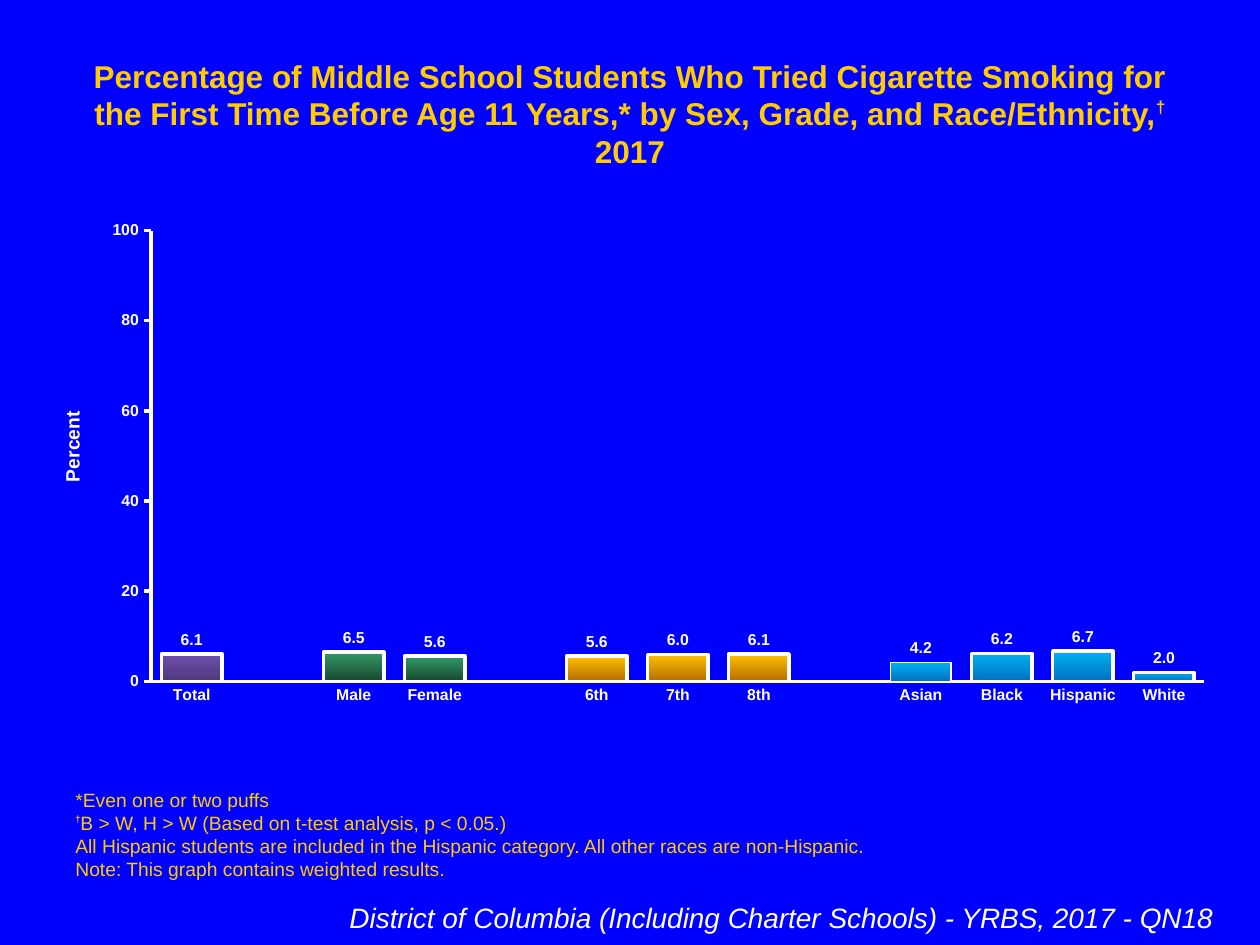
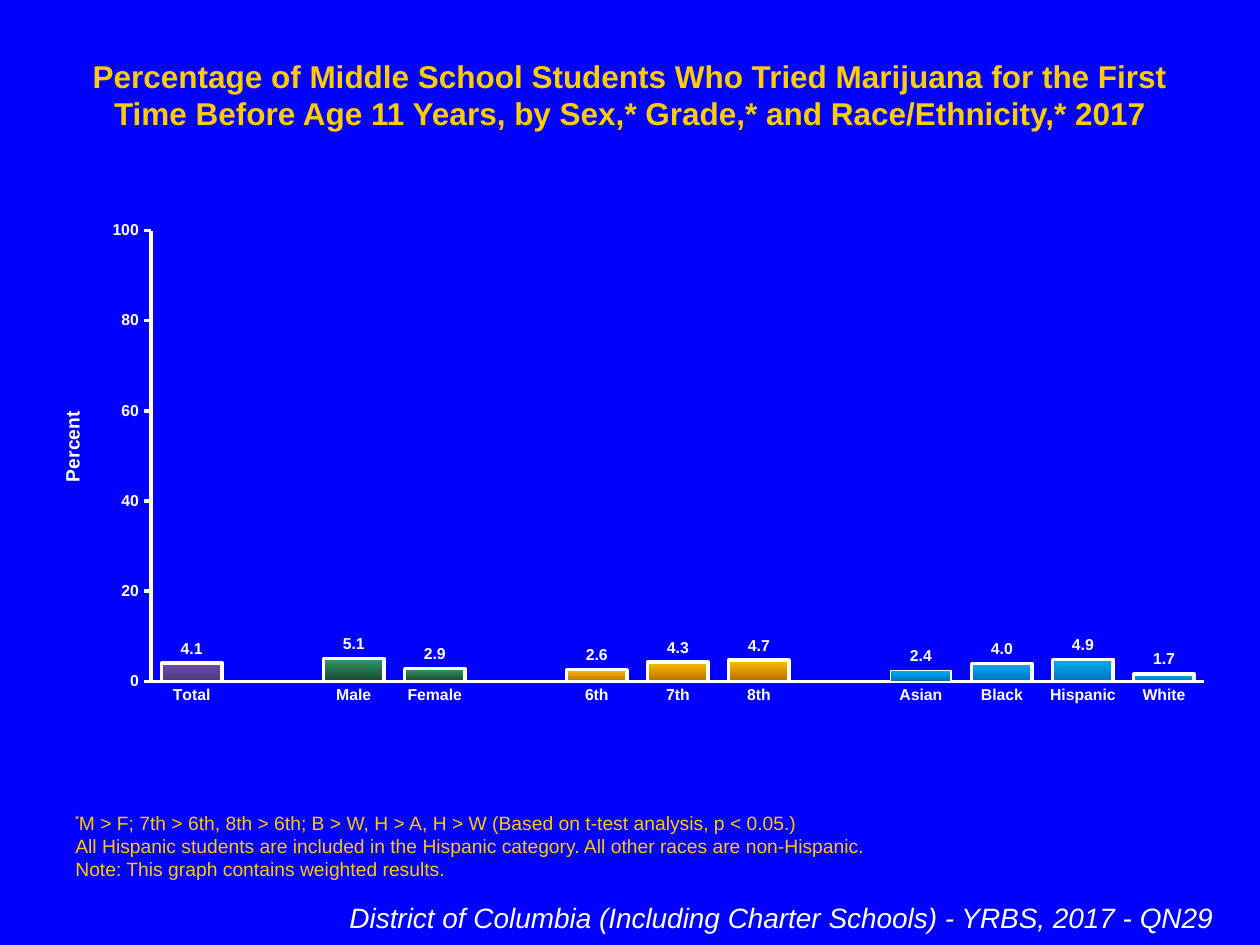
from dataclasses import dataclass

from lxml import etree
from pptx import Presentation
from pptx.chart.data import CategoryChartData
from pptx.dml.color import RGBColor
from pptx.enum.chart import XL_CHART_TYPE, XL_LABEL_POSITION as LabelPos, XL_TICK_MARK as Tick
from pptx.enum.text import MSO_ANCHOR as Anchor, PP_ALIGN as Align
from pptx.oxml import parse_xml
from pptx.oxml.ns import nsdecls, qn
from pptx.util import Inches, Pt


@dataclass(frozen=True)
class Theme:
    font: str = "Arial"
    background: str = "0000FF"
    accent: str = "FFCC00"
    light: str = "FFFFFF"
    title: int = 18
    title_marker: int = 17
    note: int = 11
    note_marker: int = 9
    source: int = 16
    axis_title: int = 11
    chart_text: int = 9
    axis_line: int = 2


@dataclass(frozen=True)
class Piece:
    """Part of a line with its own size, weight and rise in percent."""
    text: str
    size: int
    bold: bool = False
    rise: int = 0


THEME = Theme()
WIDTH, HEIGHT = Inches(10), Inches(7.5)
COLUMNS, ROWS = 40, 30

# Student group: top and bottom colour of its columns, and their labels
GROUPS = [
    (("6E4EAE", "4F387C"), ["Total"]),
    (("339966", "18472F"), ["Male", "Female"]),
    (("FFC000", "B66D00"), ["6th", "7th", "8th"]),
    (("00B0F0", "0070C0"), ["Asian", "Black", "Hispanic", "White"]),
]
THIN_OUTLINED = "Asian"

COMMON_NOTES = [
    "All Hispanic students are included in the Hispanic category. "
    "All other races are non-Hispanic.",
    "Note: This graph contains weighted results.",
]


def rgb(colour):
    return RGBColor.from_string(colour)


def area(column, row, columns, rows):
    """Turn a grid area into left, top, width and height."""
    return (round(WIDTH * column / COLUMNS), round(HEIGHT * row / ROWS),
            round(WIDTH * columns / COLUMNS), round(HEIGHT * rows / ROWS))


def style(font, size, colour, bold=False, italic=False):
    font.name = THEME.font
    font.size = Pt(size)
    font.color.rgb = rgb(colour)
    font.bold = bold
    font.italic = italic


def add_text(slide, place, lines, colour, align=Align.LEFT, anchor=Anchor.TOP, italic=False):
    """Write each line, a list of pieces, as one paragraph."""
    frame = slide.shapes.add_textbox(*place).text_frame
    frame.word_wrap = True
    frame.vertical_anchor = anchor
    for index, pieces in enumerate(lines):
        paragraph = frame.add_paragraph() if index else frame.paragraphs[0]
        paragraph.alignment = align
        for piece in pieces:
            run = paragraph.add_run()
            run.text = piece.text
            style(run.font, piece.size, colour, piece.bold, italic)
            if piece.rise:
                run._r.get_or_add_rPr().set("baseline", str(piece.rise * 1000))


def add_title(slide, pieces):
    add_text(slide, area(2, 1.6, 36, 4.4), [pieces], THEME.accent, Align.CENTER)


def add_notes(slide, lines):
    common = [[Piece(note, THEME.note)] for note in COMMON_NOTES]
    add_text(slide, area(2, 24, 36, 4.16), lines + common, THEME.accent, anchor=Anchor.BOTTOM)


def add_source(slide, question):
    text = f"District of Columbia (Including Charter Schools) - YRBS, 2017 - {question}"
    add_text(slide, area(1.32, 28.4, 37.6, 1.48), [[Piece(text, THEME.source)]],
             THEME.light, Align.RIGHT, italic=True)


def set_layout(parent, before, **shares):
    """Fix the place of a chart part by shares of the chart."""
    for old in parent.findall(qn("c:layout")):
        parent.remove(old)
    layout = parse_xml(f'<c:layout {nsdecls("c")}><c:manualLayout/></c:layout>')
    settings = {"xMode": "edge", "yMode": "edge", **shares}
    if "w" in shares:
        settings = {"layoutTarget": "inner", **settings}
    for tag, value in settings.items():
        etree.SubElement(layout[0], qn(f"c:{tag}")).set("val", str(value))
    parent.find(qn(before)).addprevious(layout)


def style_axis(axis, tick):
    axis.has_major_gridlines = False
    axis.major_tick_mark = tick
    axis.minor_tick_mark = Tick.NONE
    axis.format.line.color.rgb = rgb(THEME.light)
    axis.format.line.width = Pt(THEME.axis_line)
    style(axis.tick_labels.font, THEME.chart_text, THEME.light, bold=True)


def style_percent_axis(axis):
    style_axis(axis, Tick.OUTSIDE)
    axis.minimum_scale, axis.maximum_scale, axis.major_unit = 0, 100, 20
    title = axis.axis_title
    title.text_frame.text = "Percent"
    style(title.text_frame.paragraphs[0].runs[0].font, THEME.axis_title, THEME.light, bold=True)
    set_layout(title._element, "c:overlay", x=0.02, y=0.39)


def colour_column(column, shades, outline):
    column.format.line.color.rgb = rgb(THEME.light)
    column.format.line.width = Pt(outline)
    fill = column.format.fill
    fill.gradient()
    fill.gradient_angle = 270
    for stop, shade, position in zip(fill.gradient_stops, shades, (0, 1)):
        stop.color.rgb = rgb(shade)
        stop.position = position


def add_group_chart(slide, group_values):
    """Draw one column per label, with an empty place between groups."""
    columns = []
    for (shades, labels), values in zip(GROUPS, group_values):
        if columns:
            columns.append(("", None, None))
        columns += [(label, value, shades) for label, value in zip(labels, values)]

    data = CategoryChartData(number_format="General")
    data.categories = [label for label, _, _ in columns]
    data.add_series("Series 1", [value for _, value, _ in columns])
    chart = slide.shapes.add_chart(XL_CHART_TYPE.COLUMN_CLUSTERED,
                                   *area(1, 6.68, 38, 16), data).chart
    chart.has_legend = False
    chart.has_title = False
    style(chart.font, THEME.title, THEME.light)
    style_axis(chart.category_axis, Tick.NONE)
    style_percent_axis(chart.value_axis)

    plot = chart.plots[0]
    plot.vary_by_categories = False
    plot.gap_width, plot.overlap = 34, 100
    for index, (label, _, shades) in enumerate(columns):
        if shades:
            outline = 1 if label == THIN_OUTLINED else 2
            colour_column(plot.series[0].points[index], shades, outline)

    plot.has_data_labels = True
    labels = plot.data_labels
    labels.show_value = True
    labels.number_format, labels.number_format_is_linked = "#,##0.0", False
    labels.position = LabelPos.OUTSIDE_END
    style(labels.font, THEME.chart_text, THEME.light, bold=True)
    set_layout(chart._chartSpace.chart.plotArea, "c:barChart", x=0.1, y=0.04, w=0.88, h=0.895)


def add_survey_slide(deck, title, group_values, notes, question):
    slide = deck.slides.add_slide(deck.slide_layouts[6])
    add_title(slide, title)
    add_notes(slide, notes)
    add_source(slide, question)
    add_group_chart(slide, group_values)


def title_piece(text):
    return Piece(text, THEME.title, bold=True)


def marked_note(marker, text):
    return [Piece(marker, THEME.note_marker, bold=True, rise=50), Piece(text, THEME.note)]


def main():
    deck = Presentation()
    deck.slide_width, deck.slide_height = WIDTH, HEIGHT
    backdrop = deck.slide_master.background.fill
    backdrop.solid()
    backdrop.fore_color.rgb = rgb(THEME.background)

    add_survey_slide(
        deck,
        [title_piece("Percentage of Middle School Students Who Tried Cigarette Smoking for the "
                     "First Time Before Age 11 Years,* by Sex, Grade, and Race/Ethnicity,"),
         Piece("†", THEME.title_marker, bold=True, rise=40),
         title_piece(" 2017")],
        [[6.1], [6.5, 5.6], [5.6, 6.0, 6.1], [4.2, 6.2, 6.7, 2.0]],
        [[Piece("*Even one or two puffs", THEME.note)],
         marked_note("†", "B > W, H > W (Based on t-test analysis, p < 0.05.)")],
        "QN18")
    add_survey_slide(
        deck,
        [title_piece("Percentage of Middle School Students Who Tried Marijuana for the First Time "
                     "Before Age 11 Years, by Sex,* Grade,* and Race/Ethnicity,* 2017")],
        [[4.1], [5.1, 2.9], [2.6, 4.3, 4.7], [2.4, 4.0, 4.9, 1.7]],
        [marked_note("*", "M > F; 7th > 6th, 8th > 6th; B > W, H > A, H > W "
                          "(Based on t-test analysis, p < 0.05.)")],
        "QN29")
    deck.save("out.pptx")


if __name__ == "__main__":
    main()
